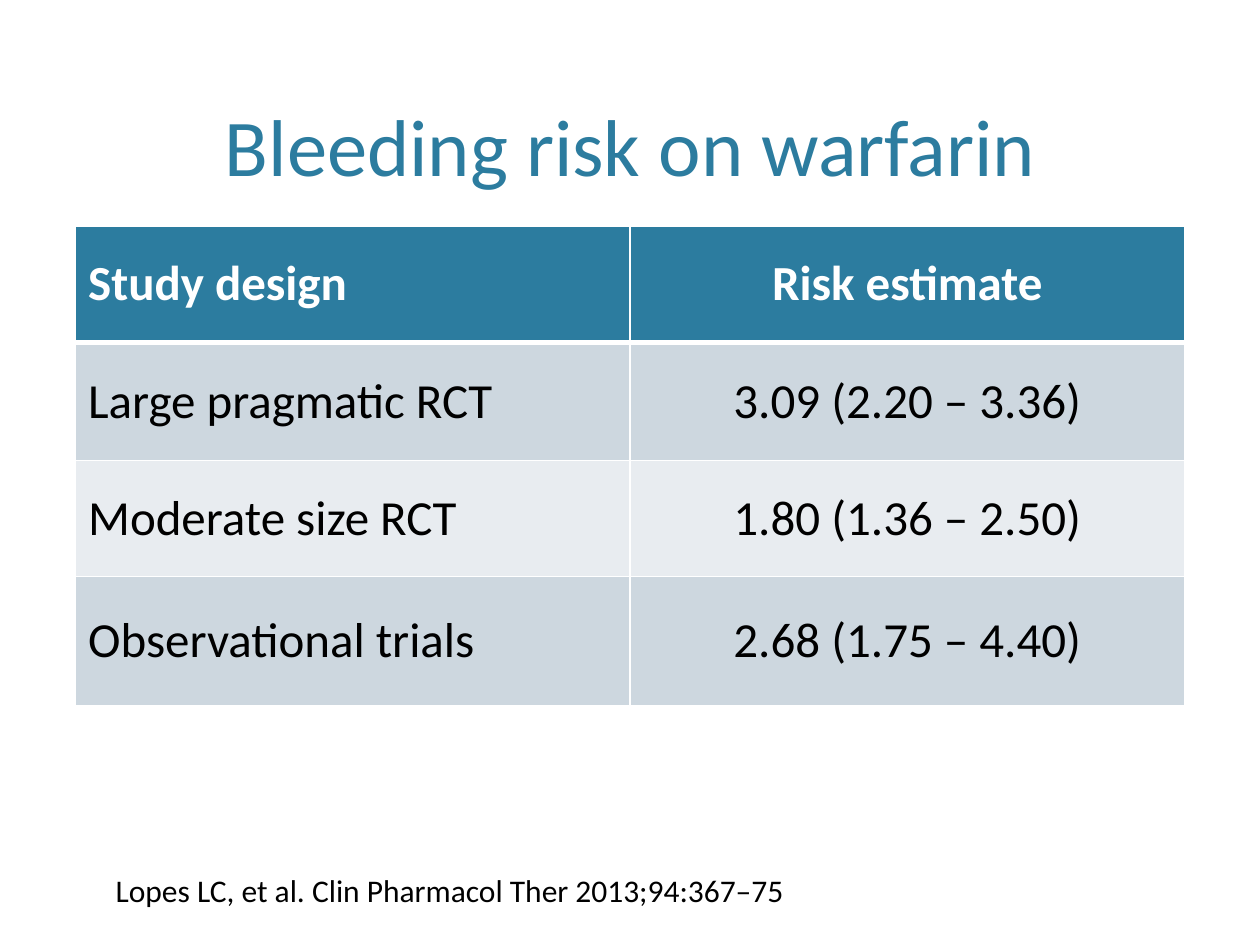
from dataclasses import dataclass

from lxml.etree import SubElement
from pptx import Presentation
from pptx.dml.color import RGBColor
from pptx.enum.text import MSO_ANCHOR as ANCHOR, MSO_AUTO_SIZE as AUTO, PP_ALIGN as ALIGN
from pptx.oxml.ns import qn
from pptx.util import Pt


@dataclass(frozen=True)
class Theme:
    font: str = "Calibri"
    accent: str = "2C7C9F"
    white: str = "FFFFFF"
    black: str = "000000"
    bands: tuple = ("CDD7DF", "E8ECF0")
    title_size: int = 46
    table_size: int = 28
    source_size: int = 18


theme = Theme()


def add_text(p, text, size, color, bold=False):
    r = p.add_run()
    r.text = text
    r.font.name = theme.font
    r.font.size = Pt(size)
    r.font.bold = bold
    r.font.color.rgb = RGBColor.from_string(color)


def add_border(cell, side, width):
    ln = SubElement(cell._tc.get_or_add_tcPr(), qn(f"a:ln{side}"), w=str(Pt(width)))
    fill = SubElement(ln, qn("a:solidFill"))
    SubElement(fill, qn("a:srgbClr"), val=theme.white)


prs = Presentation()
prs.slide_width, prs.slide_height = Pt(720), Pt(540)
s = prs.slides.add_slide(prs.slide_layouts[5])
left, width = 43.2, 633.6

# Title
title = s.shapes.title
title.left, title.top, title.width, title.height = Pt(left), Pt(8.6), Pt(width), Pt(105.1)
tf = title.text_frame
tf.word_wrap = True
tf.auto_size = AUTO.NONE
tf.vertical_anchor = ANCHOR.BOTTOM
p = tf.paragraphs[0]
p.alignment = ALIGN.CENTER
add_text(p, "Bleeding risk on warfarin", theme.title_size, theme.accent)

# Risk table
rows = [
    ("Study design", "Risk estimate"),
    ("Large pragmatic RCT", "3.09 (2.20 – 3.36)"),
    ("Moderate size RCT", "1.80 (1.36 – 2.50)"),
    ("Observational trials", "2.68 (1.75 – 4.40)"),
]
row_heights = [66.4, 67.5, 66.4, 73.6]
table = s.shapes.add_table(
    len(rows), 2, Pt(left), Pt(129.2), Pt(width), Pt(sum(row_heights))
).table
for column in table.columns:
    column.width = Pt(width / 2)

for i, (texts, height) in enumerate(zip(rows, row_heights)):
    table.rows[i].height = Pt(height)
    header = i == 0
    fill = theme.accent if header else theme.bands[(i - 1) % 2]
    color = theme.white if header else theme.black
    # The rule below the header is heavier than the others
    borders = {"L": 1, "R": 1, "T": 3 if i == 1 else 1, "B": 3 if header else 1}
    for j, text in enumerate(texts):
        cell = table.cell(i, j)
        cell.vertical_anchor = ANCHOR.MIDDLE
        for side, weight in borders.items():
            add_border(cell, side, weight)
        cell.fill.solid()
        cell.fill.fore_color.rgb = RGBColor.from_string(fill)
        p = cell.text_frame.paragraphs[0]
        p.alignment = ALIGN.CENTER if j else ALIGN.LEFT
        add_text(p, text, theme.table_size, color, bold=header)

# Source citation
source = s.shapes.add_textbox(Pt(59), Pt(493.9), Pt(490.3), Pt(29))
tf = source.text_frame
tf.word_wrap = True
tf.auto_size = AUTO.SHAPE_TO_FIT_TEXT
add_text(tf.paragraphs[0], "Lopes LC, et al. Clin Pharmacol Ther 2013;94:367–75",
         theme.source_size, theme.black)

prs.save("out.pptx")
